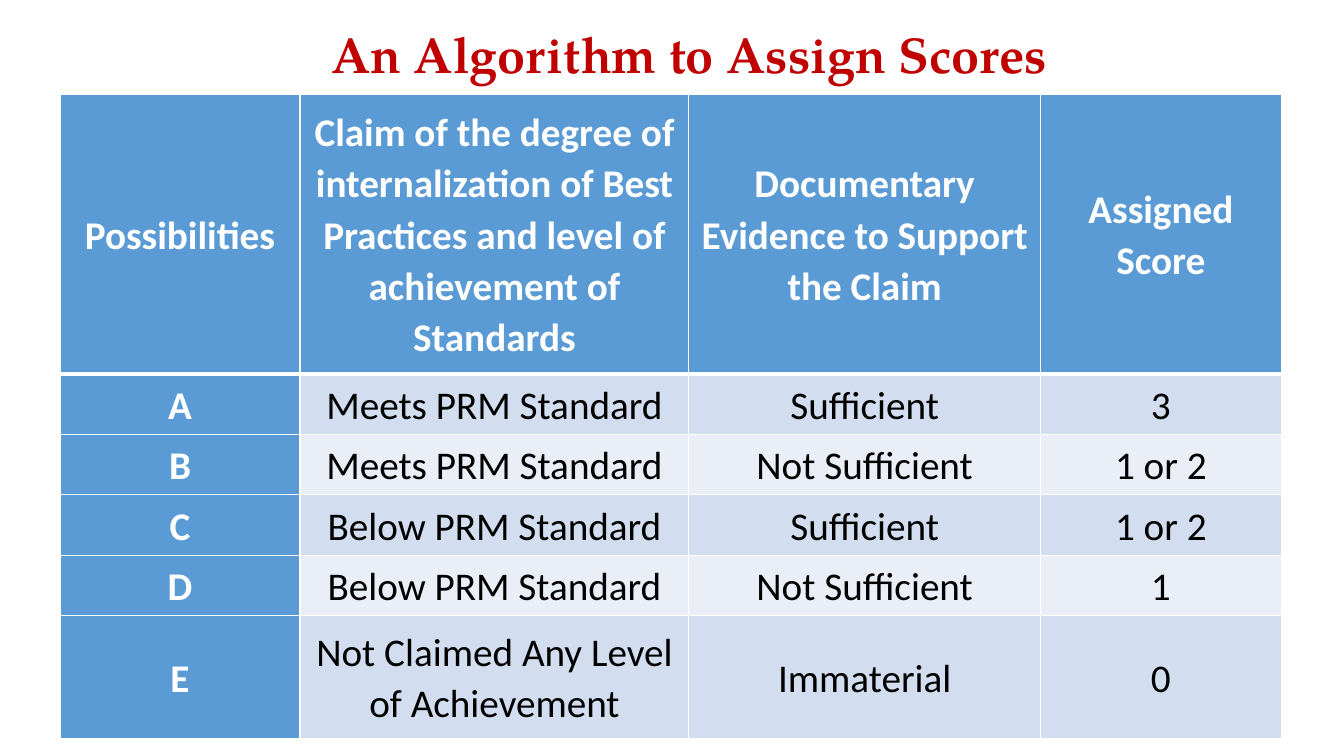
from dataclasses import dataclass

from lxml.etree import SubElement
from pptx import Presentation
from pptx.dml.color import RGBColor
from pptx.enum.text import MSO_ANCHOR, MSO_AUTO_SIZE, PP_ALIGN
from pptx.oxml.ns import qn
from pptx.slide import Slide
from pptx.table import _Cell
from pptx.util import Cm, Pt


@dataclass(frozen=True)
class Theme:
    title_font: str = "TeX Gyre Pagella"
    body_font: str = "Calibri"
    title_size: int = 36
    body_size: int = 28
    line_spacing: float = 1.07
    title: str = "C00000"
    head: str = "5B9BD5"
    bands: tuple[str, str] = ("D2DEEF", "EAEFF7")
    light: str = "FFFFFF"
    dark: str = "000000"
    thin: int = 1
    thick: int = 3


@dataclass(frozen=True)
class Row:
    height: float
    texts: tuple[str, str, str, str]


THEME = Theme()
COLUMN_WIDTHS = (6.05, 9.8, 8.86, 6.07)
ROWS = (
    Row(7.06, (
        "Possibilities",
        "Claim of the degree of internalization of Best Practices "
        "and level of achievement of Standards",
        "Documentary Evidence to Support the Claim",
        "Assigned Score",
    )),
    Row(1.52, ("A", "Meets PRM Standard", "Sufficient", "3")),
    Row(1.52, ("B", "Meets PRM Standard", "Not Sufficient", "1 or 2")),
    Row(1.52, ("C", "Below PRM Standard", "Sufficient", "1 or 2")),
    Row(1.52, ("D", "Below PRM Standard", "Not Sufficient", "1")),
    Row(3.1, ("E", "Not Claimed Any Level of Achievement", "Immaterial", "0")),
)


def set_borders(cell: _Cell, top: int, bottom: int) -> None:
    """Draw the four cell edges, with widths in points."""
    tc_pr = cell._tc.get_or_add_tcPr()
    widths = {"L": THEME.thin, "R": THEME.thin, "T": top, "B": bottom}
    for side, width in widths.items():
        ln = SubElement(tc_pr, qn(f"a:ln{side}"), w=str(Pt(width)))
        fill = SubElement(ln, qn("a:solidFill"))
        SubElement(fill, qn("a:srgbClr"), val=THEME.light)


def fill_cell(cell: _Cell, text: str, row: int, col: int) -> None:
    is_head = row == 0 or col == 0
    set_borders(
        cell,
        top=THEME.thick if row == 1 else THEME.thin,
        bottom=THEME.thick if row == 0 else THEME.thin,
    )
    cell.fill.solid()
    color = THEME.head if is_head else THEME.bands[(row - 1) % 2]
    cell.fill.fore_color.rgb = RGBColor.from_string(color)
    cell.vertical_anchor = MSO_ANCHOR.MIDDLE
    cell.margin_left = cell.margin_right = Cm(0.18)
    cell.margin_top = cell.margin_bottom = 0

    p = cell.text_frame.paragraphs[0]
    p.text = text
    p.alignment = PP_ALIGN.CENTER
    p.line_spacing = THEME.line_spacing
    p.font.name = THEME.body_font
    p.font.size = Pt(THEME.body_size)
    p.font.bold = is_head
    p.font.color.rgb = RGBColor.from_string(THEME.light if is_head else THEME.dark)


def add_score_table(s: Slide) -> None:
    table = s.shapes.add_table(
        len(ROWS), len(COLUMN_WIDTHS), Cm(1.51), Cm(2.37),
        Cm(sum(COLUMN_WIDTHS)), Cm(sum(row.height for row in ROWS)),
    ).table
    table.first_col = True
    for column, width in zip(table.columns, COLUMN_WIDTHS):
        column.width = Cm(width)
    for i, row in enumerate(ROWS):
        table.rows[i].height = Cm(row.height)
        for j, text in enumerate(row.texts):
            fill_cell(table.cell(i, j), text, i, j)


def add_title(s: Slide, text: str) -> None:
    tf = s.shapes.add_textbox(Cm(8.1), Cm(0.36), Cm(18.67), Cm(1.83)).text_frame
    tf.word_wrap = False
    tf.auto_size = MSO_AUTO_SIZE.SHAPE_TO_FIT_TEXT
    p = tf.paragraphs[0]
    p.text = text
    p.line_spacing = THEME.line_spacing
    p.space_after = Pt(8)
    p.font.name = THEME.title_font
    p.font.size = Pt(THEME.title_size)
    p.font.bold = True
    p.font.color.rgb = RGBColor.from_string(THEME.title)


def main() -> None:
    prs = Presentation()
    prs.slide_width, prs.slide_height = Cm(33.87), Cm(19.05)
    s = prs.slides.add_slide(prs.slide_layouts[6])

    # Score table, then the heading above it
    add_score_table(s)
    add_title(s, "An Algorithm to Assign Scores")

    prs.save("out.pptx")


if __name__ == "__main__":
    main()
